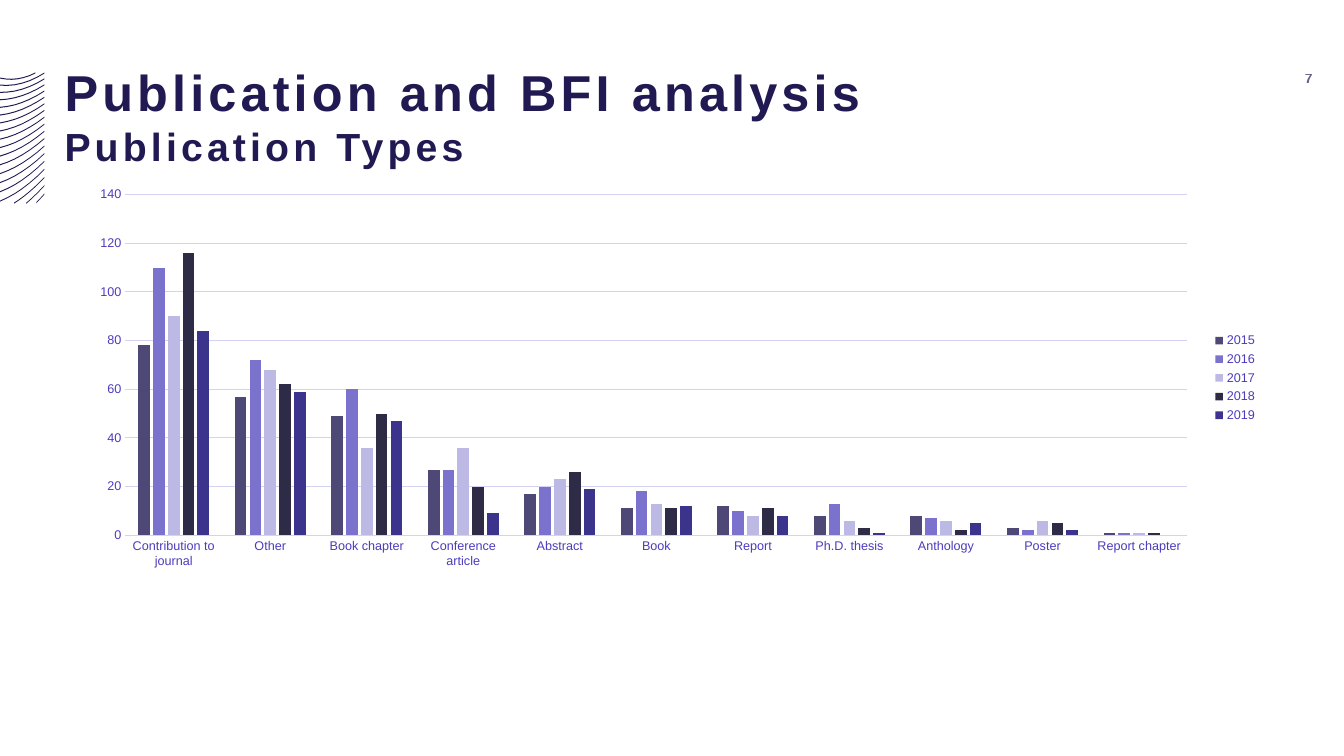
from dataclasses import dataclass

from lxml.etree import SubElement
from pptx import Presentation
from pptx.chart.data import CategoryChartData
from pptx.dml.color import RGBColor
from pptx.enum.chart import XL_CHART_TYPE, XL_LEGEND_POSITION, XL_TICK_MARK
from pptx.enum.text import MSO_ANCHOR, MSO_AUTO_SIZE, PP_ALIGN
from pptx.oxml.ns import qn
from pptx.util import Inches, Pt

WIDTH, HEIGHT = 13.33, 7.5


@dataclass(frozen=True)
class Theme:
    font: str = "Arial"
    ink: str = "211A52"
    label: str = "4C3CBD"
    grid: str = "D5D1F0"
    title_size: int = 36
    subtitle_size: int = 28
    number_size: int = 10
    chart_size: int = 9
    hairline: float = 0.75


THEME = Theme()

CATEGORIES = [
    "Contribution to journal", "Other", "Book chapter", "Conference article",
    "Abstract", "Book", "Report", "Ph.D. thesis", "Anthology", "Poster",
    "Report chapter",
]
YEARS = {
    "2015": ("4D4875", [78, 57, 49, 27, 17, 11, 12, 8, 8, 3, 1]),
    "2016": ("7A72CC", [110, 72, 60, 27, 20, 18, 10, 13, 7, 2, 1]),
    "2017": ("BDB9E5", [90, 68, 36, 36, 23, 13, 8, 6, 6, 6, 1]),
    "2018": ("2E2B46", [116, 62, 50, 20, 26, 11, 11, 3, 2, 5, 1]),
    "2019": ("3B338C", [84, 59, 47, 9, 19, 12, 8, 1, 5, 2, None]),
}

WAVE_WIDTH = 0.44
WAVE_THICKNESS = 0.01
CUT_WAVES = {-1: (0, 0.35), 15: (0.14, 0.44), 16: (0.26, 0.44), 17: (0.36, 0.44)}


def area(left, top, width, height):
    across, down = WIDTH / 100, HEIGHT / 100
    return [Inches(share * unit) for share, unit in
            zip((left, top, width, height), (across, down, across, down))]


def assign(target, values):
    for name, value in values.items():
        setattr(target, name, value)


def style_font(font, size, color, bold=False):
    assign(font, {"name": THEME.font, "size": Pt(size), "bold": bold})
    font.color.rgb = RGBColor.from_string(color)


def style_fill(fill, color):
    fill.solid()
    fill.fore_color.rgb = RGBColor.from_string(color)


def style_line(line, color):
    line.width = Pt(THEME.hairline)
    line.color.rgb = RGBColor.from_string(color)


def style_frame(frame, anchor, top=0):
    assign(frame, {
        "word_wrap": True, "auto_size": MSO_AUTO_SIZE.NONE,
        "vertical_anchor": anchor, "margin_left": 0, "margin_right": 0,
        "margin_top": Inches(top), "margin_bottom": 0,
    })


def add_span(para, text, size):
    span = para.add_run()
    span.text = text
    style_font(span.font, size, THEME.ink, bold=True)
    return span


def add_title(page, heading, subheading):
    title = page.shapes.title
    assign(title, dict(zip(("left", "top", "width", "height"),
                           area(4.8, 5.33, 88.22, 21.47))))
    style_frame(title.text_frame, MSO_ANCHOR.TOP, top=0.21)
    para = title.text_frame.paragraphs[0]
    assign(para, {"alignment": PP_ALIGN.LEFT, "line_spacing": 1.0})
    spans = [add_span(para, heading, THEME.title_size)]
    para.add_line_break()
    spans.append(add_span(para, subheading, THEME.subtitle_size))
    for span in spans:
        span.font._element.set("spc", "300")


def add_page_number(page, number):
    box = page.shapes.add_textbox(*area(93.02, 8.67, 4.65, 3.33))
    style_frame(box.text_frame, MSO_ANCHOR.MIDDLE)
    para = box.text_frame.paragraphs[0]
    para.alignment = PP_ALIGN.RIGHT
    span = add_span(para, number, THEME.number_size)
    color = span.font._element.find(".//" + qn("a:srgbClr"))
    SubElement(color, qn("a:alpha")).set("val", "70000")


def wave_height(index, x):
    left = 0.84 + 0.071 * index + 0.0008 * index ** 2
    right = 0.72 + 0.057 * index + 0.0008 * index ** 2
    bend = 0.75 - 1.1 / (1 + 0.35 * index)
    share = x / WAVE_WIDTH
    return left - (left - right) * (bend * share + (1 - bend) * share ** 2)


def wave_outline(index, steps=6):
    start, end = CUT_WAVES.get(index, (0, WAVE_WIDTH))
    columns = [start + (end - start) * step / steps for step in range(steps + 1)]
    upper = [(x, wave_height(index, x)) for x in columns]
    lower = [(x, y + WAVE_THICKNESS) for x, y in reversed(upper)]
    return [(x * 1000, y * 1000) for x, y in upper + lower]


def add_waves(page):
    for index in range(17, -2, -1):
        start, *rest = wave_outline(index)
        builder = page.shapes.build_freeform(*start, scale=Inches(1) / 1000)
        builder.add_line_segments(rest, close=True)
        wave = builder.convert_to_shape()
        wave.shadow.inherit = False
        style_fill(wave.fill, THEME.ink)
        wave.line.fill.background()


def style_axis(axis):
    assign(axis, {"major_tick_mark": XL_TICK_MARK.NONE,
                  "minor_tick_mark": XL_TICK_MARK.NONE})
    style_font(axis.tick_labels.font, THEME.chart_size, THEME.label)


def add_publication_chart(page):
    data = CategoryChartData()
    data.categories = CATEGORIES
    for year, (_, counts) in YEARS.items():
        data.add_series(year, counts)
    chart = page.shapes.add_chart(
        XL_CHART_TYPE.COLUMN_CLUSTERED, *area(5.7, 23.73, 88.6, 52.53), data).chart
    assign(chart, {"has_title": False, "has_legend": True})
    style_font(chart.font, THEME.number_size, THEME.ink)
    assign(chart.legend, {"position": XL_LEGEND_POSITION.RIGHT,
                          "include_in_layout": False})
    style_font(chart.legend.font, THEME.chart_size, THEME.label)

    plot = chart.plots[0]
    assign(plot, {"gap_width": 219, "overlap": -27, "vary_by_categories": False})
    for series, (color, _) in zip(plot.series, YEARS.values()):
        style_fill(series.format.fill, color)

    for axis in (chart.category_axis, chart.value_axis):
        style_axis(axis)
    style_line(chart.category_axis.format.line, THEME.grid)
    values = chart.value_axis
    assign(values, {"minimum_scale": 0, "maximum_scale": 140, "major_unit": 20,
                    "has_major_gridlines": True})
    values.format.line.fill.background()
    style_line(values.major_gridlines.format.line, THEME.grid)


def main():
    deck = Presentation()
    assign(deck, {"slide_width": Inches(WIDTH), "slide_height": Inches(HEIGHT)})
    page = deck.slides.add_slide(deck.slide_layouts[5])
    add_waves(page)
    add_title(page, "Publication and BFI analysis", "Publication Types")
    add_publication_chart(page)
    add_page_number(page, "7")
    deck.save("out.pptx")


if __name__ == "__main__":
    main()
